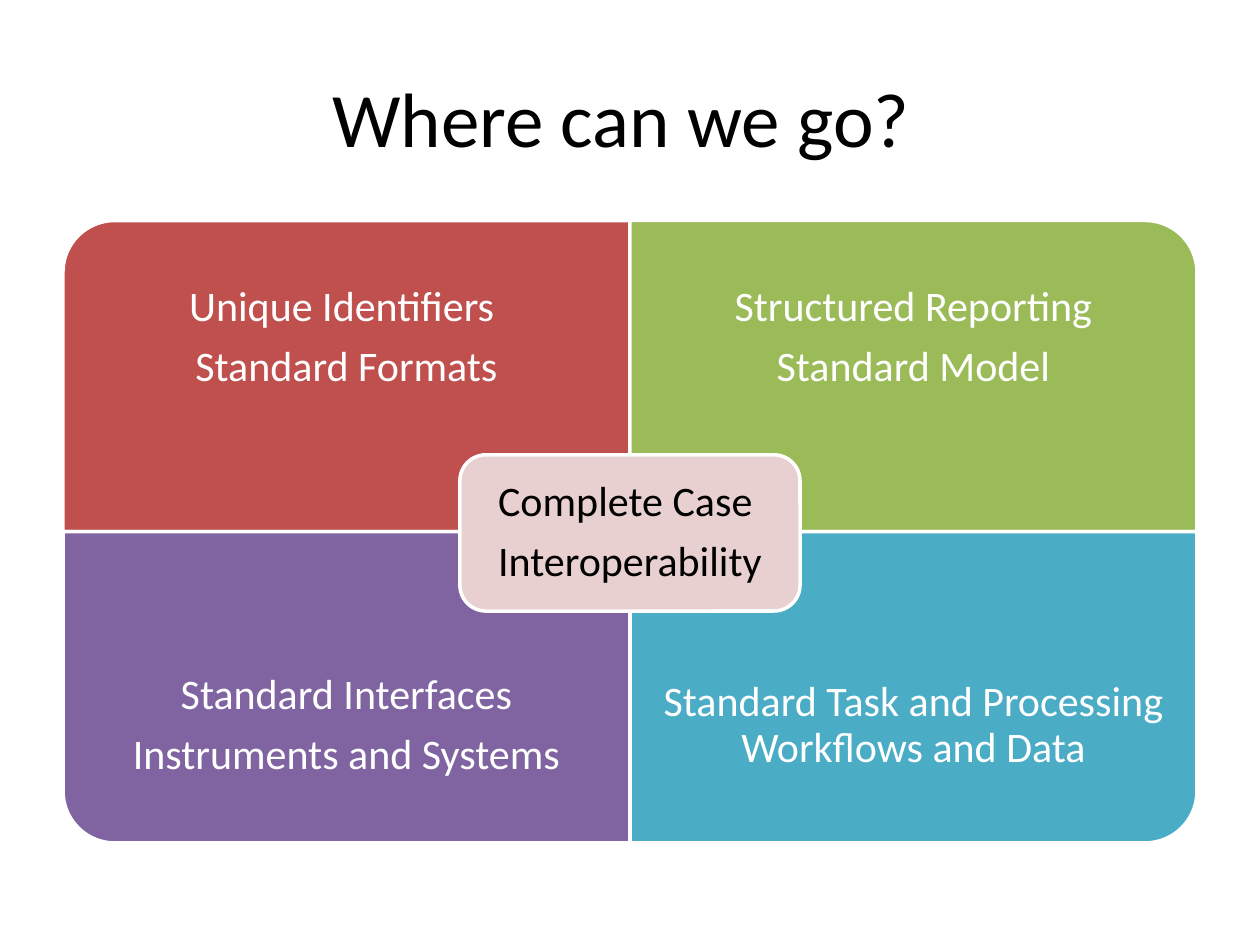
from pptx import Presentation
from pptx.dml.color import RGBColor
from pptx.enum.shapes import MSO_SHAPE
from pptx.enum.text import MSO_ANCHOR, PP_ALIGN
from pptx.util import Inches, Pt

BLACK = RGBColor(0x00, 0x00, 0x00)
WHITE = RGBColor(0xFF, 0xFF, 0xFF)
RED = RGBColor(0xC0, 0x50, 0x4D)
GREEN = RGBColor(0x9B, 0xBB, 0x59)
PURPLE = RGBColor(0x80, 0x64, 0xA2)
BLUE = RGBColor(0x4B, 0xAC, 0xC6)
PINK = RGBColor(0xE8, 0xD0, 0xD0)

LEFT, TOP = 0.5, 1.75
QUAD_W, QUAD_H = 4.5, 2.47
LABEL_H = 1.86

# column, row, rotation that turns the round corner outwards, fill, lines
QUADRANTS = [
    (0, 0, 270, RED, ["Unique Identifiers ", "Standard Formats"]),
    (1, 0, 0, GREEN, ["Structured Reporting", "Standard Model"]),
    (0, 1, 180, PURPLE, ["Standard Interfaces", "Instruments and Systems"]),
    (1, 1, 90, BLUE, ["Standard Task and Processing Workflows and Data"]),
]


class Deck:
    font = "Calibri"
    body_size = 24

    def __init__(self, width, height):
        self.prs = Presentation()
        self.prs.slide_width, self.prs.slide_height = Inches(width), Inches(height)
        self.s = None

    def add_slide(self):
        self.s = self.prs.slides.add_slide(self.prs.slide_layouts[6])

    def panel(self, kind, x, y, w, h, fill, rotation=0):
        """Add a white-edged shape that covers the given box after rotation."""
        cx, cy = x + w / 2, y + h / 2
        if rotation % 180:
            w, h = h, w
        sp = self.s.shapes.add_shape(
            kind, Inches(cx - w / 2), Inches(cy - h / 2), Inches(w), Inches(h))
        sp.rotation = rotation
        sp.shadow.inherit = False
        sp.fill.solid()
        sp.fill.fore_color.rgb = fill
        sp.line.color.rgb = WHITE
        sp.line.width = Pt(2)

    def text(self, lines, x, y, w, h, color, inset, size=body_size,
             line_spacing=0.9, space_after=8.4):
        sp = self.s.shapes.add_textbox(Inches(x), Inches(y), Inches(w), Inches(h))
        tf = sp.text_frame
        tf.word_wrap = True
        tf.vertical_anchor = MSO_ANCHOR.MIDDLE
        tf.margin_left = tf.margin_right = Inches(inset)
        tf.margin_top = tf.margin_bottom = Inches(inset)
        tf.text = "\n".join(lines)
        for p in tf.paragraphs:
            p.alignment = PP_ALIGN.CENTER
            p.line_spacing = line_spacing
            p.space_after = Pt(space_after)
            for r in p.runs:
                r.font.name = self.font
                r.font.size = Pt(size)
                r.font.color.rgb = color


def main():
    deck = Deck(10, 7.5)
    deck.add_slide()
    deck.text(["Where can we go? "], 0.5, 0.3, 9, 1.25, BLACK, 0.1,
              size=44, line_spacing=1, space_after=0)

    for col, row, rotation, fill, lines in QUADRANTS:
        x, y = LEFT + col * QUAD_W, TOP + row * QUAD_H
        deck.panel(MSO_SHAPE.ROUND_1_RECTANGLE, x, y, QUAD_W, QUAD_H, fill, rotation)
        # Labels keep to the outer edge, clear of the centre box
        label_y = y + row * (QUAD_H - LABEL_H)
        deck.text(lines, x, label_y, QUAD_W, LABEL_H, WHITE, 0.19)

    deck.panel(MSO_SHAPE.ROUNDED_RECTANGLE, 3.65, 3.61, 2.7, 1.24, PINK)
    deck.text(["Complete Case ", "Interoperability"],
              3.71, 3.67, 2.58, 1.12, BLACK, 0.1)
    deck.prs.save("out.pptx")


if __name__ == "__main__":
    main()
